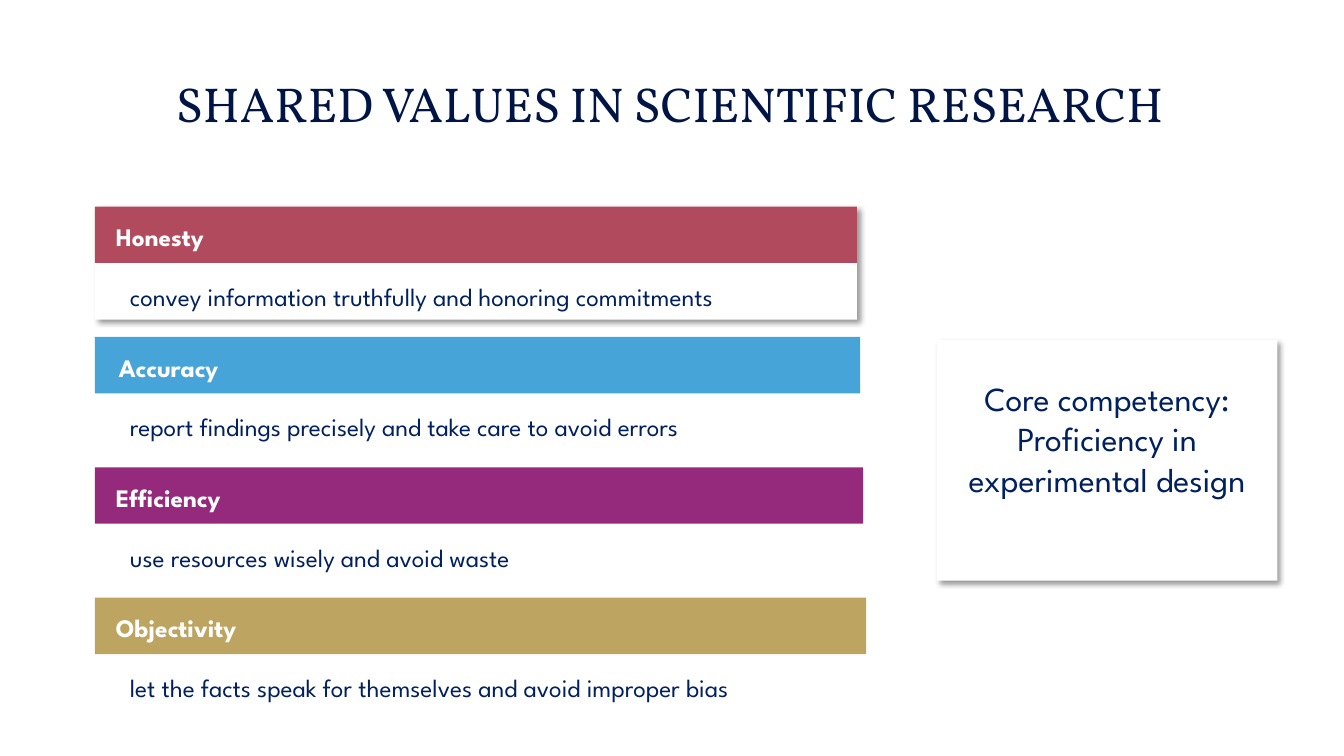
from lxml import etree
from pptx import Presentation
from pptx.dml.color import RGBColor
from pptx.enum import shapes, text
from pptx.oxml import ns
from pptx.util import Inches, Pt

# Content
HEADING = "SHARED VALUES IN SCIENTIFIC RESEARCH"
VALUES = [  # name, meaning, bar colour, label left, raised card
    ("Honesty", "convey information truthfully and honoring commitments",
     "B24A5D", 1.05, True),
    ("Accuracy", "report findings precisely and take care to avoid errors",
     "47A4D9", 1.08, False),
    ("Efficiency", "use resources wisely and avoid waste",
     "952A7D", 1.05, False),
    ("Objectivity", "let the facts speak for themselves and avoid improper bias",
     "BDA461", 1.05, False),
]
COMPETENCY = ["Core competency:", "Proficiency in experimental design"]

# Formats
WHITE = "FFFFFF"
HEADING_FONT = {"name": "Vollkorn", "size": Pt(35), "color": "001546"}
LABEL_FONT = {"name": "League Spartan", "size": Pt(18), "bold": True, "color": WHITE}
MEANING_FONT = {"name": "League Spartan", "size": Pt(18), "color": "002060"}
COMPETENCY_FONT = {**MEANING_FONT, "size": Pt(24)}

# Layout in inches
LEFT, FIRST_TOP, LAST_TOP = 0.94, 2.05, 5.93
PITCH = (LAST_TOP - FIRST_TOP) / (len(VALUES) - 1)
FIRST_WIDTH, WIDENING = 7.56, 0.03
CARD_HEIGHT, BAR_HEIGHT, LINE_HEIGHT = 1.12, 0.56, 0.4


def rgb(hex_color):
    return RGBColor.from_string(hex_color)


def add_shadow(card):
    effects = card._element.spPr.find(ns.qn("a:effectLst"))
    outer = etree.SubElement(effects, ns.qn("a:outerShdw"), blurRad=str(Pt(4)),
                             dist=str(Pt(3)), dir="2700000", algn="tl", rotWithShape="0")
    black = etree.SubElement(outer, ns.qn("a:srgbClr"), val="000000")
    etree.SubElement(black, ns.qn("a:alpha"), val="40000")


def add_panel(slide, box, fill, raised=False):
    panel = slide.shapes.add_shape(shapes.MSO_SHAPE.RECTANGLE, *map(Inches, box))
    panel.shadow.inherit = False
    panel.fill.solid()
    panel.fill.fore_color.rgb = rgb(fill)
    panel.line.fill.background()
    if raised:
        add_shadow(panel)


def add_words(slide, box, lines, font, align=text.PP_ALIGN.LEFT,
              anchor=text.MSO_ANCHOR.TOP):
    frame = slide.shapes.add_textbox(*map(Inches, box)).text_frame
    frame.word_wrap = True
    frame.vertical_anchor = anchor
    for i, line in enumerate(lines):
        paragraph = frame.add_paragraph() if i else frame.paragraphs[0]
        paragraph.alignment = align
        run = paragraph.add_run()
        run.text = line
        for key, value in font.items():
            if key == "color":
                run.font.color.rgb = rgb(value)
            else:
                setattr(run.font, key, value)


def main():
    deck = Presentation()
    deck.slide_width, deck.slide_height = Inches(13.33), Inches(7.5)
    slide = deck.slides.add_slide(deck.slide_layouts[6])

    # Heading
    add_words(slide, (0.62, 0.45, 12.05, 1.14), [HEADING], HEADING_FONT,
              text.PP_ALIGN.CENTER, text.MSO_ANCHOR.MIDDLE)

    # Value cards, each a little wider than the one above
    for i, (name, meaning, color, label_left, raised) in enumerate(VALUES):
        top = FIRST_TOP + i * PITCH
        width = FIRST_WIDTH + i * WIDENING
        add_panel(slide, (LEFT, top, width, CARD_HEIGHT), WHITE, raised)
        add_panel(slide, (LEFT, top, width, BAR_HEIGHT), color)
        add_words(slide, (label_left, top + 0.1, 2, LINE_HEIGHT), [name], LABEL_FONT)
        add_words(slide, (1.19, top + 0.69, 7.3, LINE_HEIGHT), [meaning], MEANING_FONT)

    # Core competency
    add_panel(slide, (9.29, 3.37, 3.38, 2.39), WHITE, raised=True)
    add_words(slide, (9.29, 3.7, 3.38, 1.72), COMPETENCY, COMPETENCY_FONT,
              text.PP_ALIGN.CENTER)

    deck.save("out.pptx")


if __name__ == "__main__":
    main()
